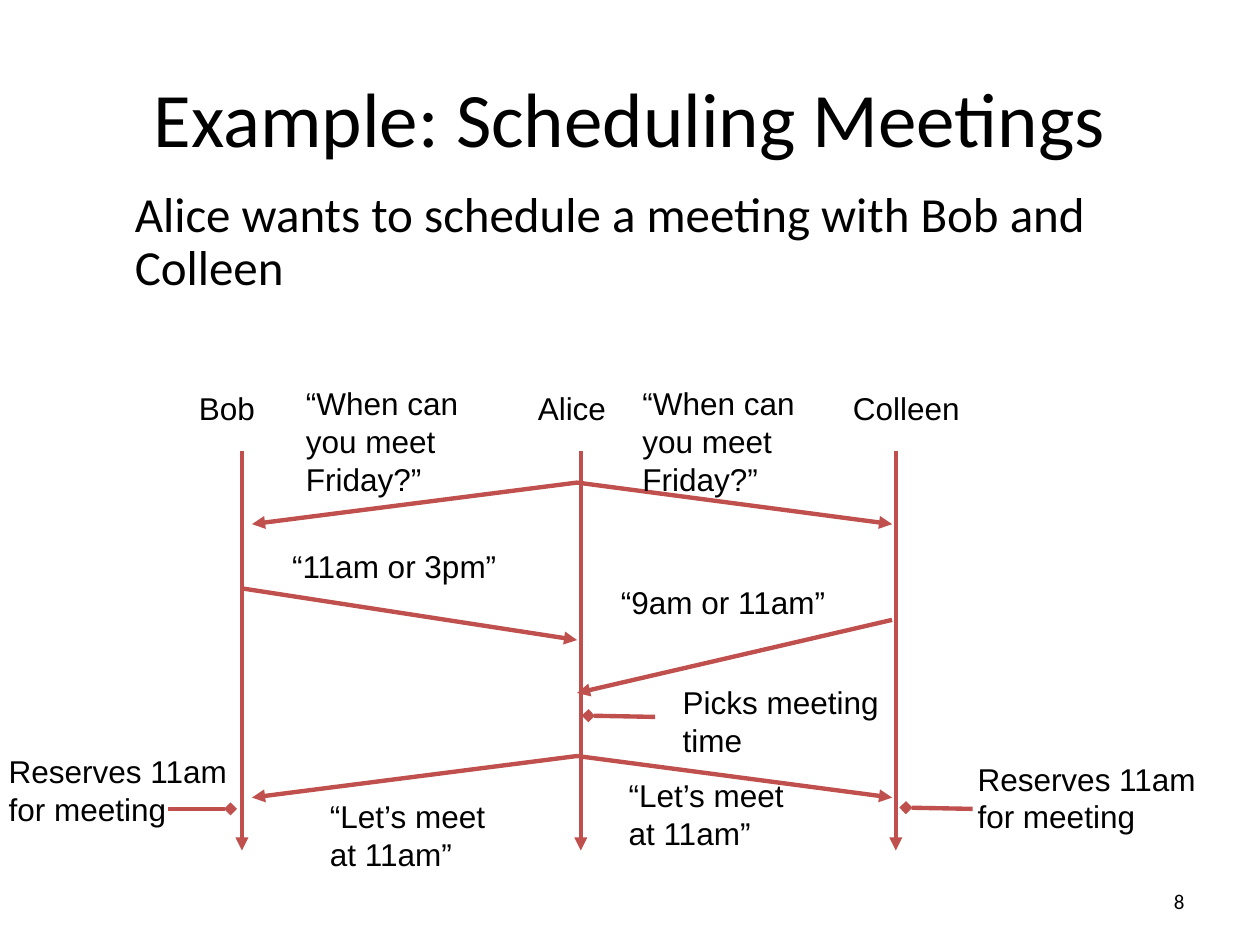
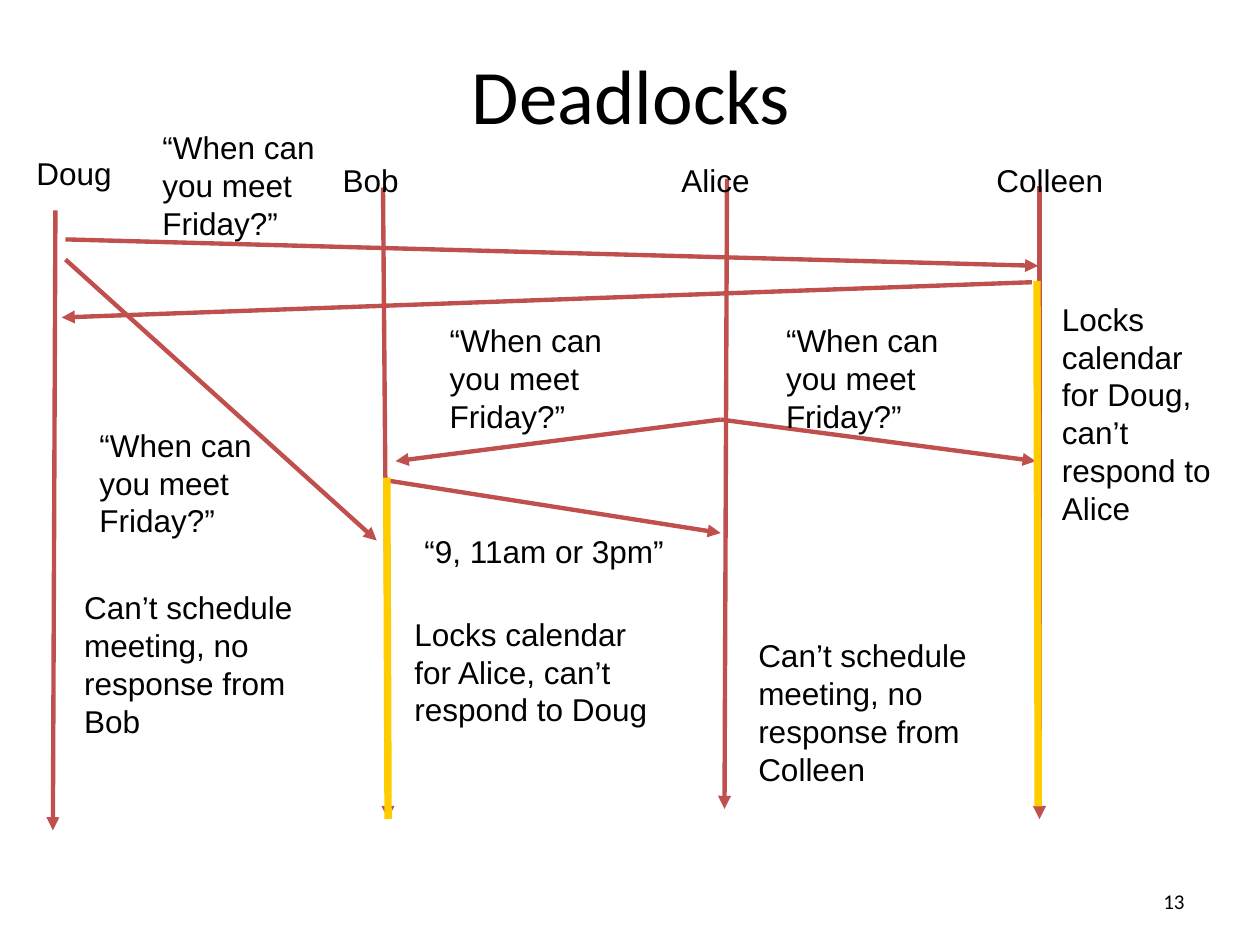
import dataclasses

import pptx
import pptx.dml.color
import pptx.enum.shapes
import pptx.enum.text
import pptx.oxml.ns
import pptx.util
from lxml import etree

Inches = pptx.util.Inches
Align = pptx.enum.text.PP_ALIGN
Anchor = pptx.enum.text.MSO_ANCHOR


@dataclasses.dataclass(frozen=True)
class Theme:
    """Colours, fonts and type sizes shared by the slides."""
    ink: str = "000000"
    arrow: str = "C0504D"
    lock: str = "FFCC00"
    heading_font: str = "Calibri"
    diagram_font: str = "Arial"
    title_size: float = 44
    body_size: float = 28
    label_size: float = 18
    number_size: float = 12
    arrow_width: float = 2.5
    lock_width: float = 4.25


@dataclasses.dataclass(frozen=True)
class Box:
    """A region of the slide, in inches."""
    left: float
    top: float
    width: float
    height: float

    def inner(self, x, y, width, height):
        """Return a box placed relative to this one."""
        return Box(self.left + x, self.top + y, width, height)


THEME = Theme()
NUMBER_BOX = Box(7.17, 6.95, 2.33, 0.4)
REQUEST = "“When can you meet Friday?”"
CONFIRMATION = "“Let’s meet at 11am”"
NAME_WIDTHS = {"Doug": 0.8, "Bob": 0.65, "Alice": 0.74, "Colleen": 1.05}


def write(slide, box, text, size, font, align=Align.LEFT, anchor=Anchor.TOP, wrap=True):
    """Add a text box and return its frame."""
    frame = slide.shapes.add_textbox(
        Inches(box.left), Inches(box.top), Inches(box.width), Inches(box.height)
    ).text_frame
    frame.text = text
    frame.word_wrap = wrap
    frame.vertical_anchor = anchor
    for paragraph in frame.paragraphs:
        paragraph.alignment = align
        for run in paragraph.runs:
            run.font.size = pptx.util.Pt(size)
            run.font.name = font
            run.font.color.rgb = pptx.dml.color.RGBColor.from_string(THEME.ink)
    return frame


def label(slide, box, x, y, width, text, lines=1, wrap=True):
    """Add diagram wording that takes the given number of lines."""
    write(slide, box.inner(x, y, width, 0.1 + 0.3 * lines), text,
          THEME.label_size, THEME.diagram_font, wrap=wrap)


def note(slide, box, x, y, width, text):
    """Add a remark whose line breaks are fixed."""
    label(slide, box, x, y, width, text, text.count("\n") + 1, wrap=False)


def draw_line(slide, box, start, end, head=None, tail=None,
              color=THEME.arrow, width=THEME.arrow_width):
    """Draw a straight line with optional end marks."""
    connector = slide.shapes.add_connector(
        pptx.enum.shapes.MSO_CONNECTOR.STRAIGHT,
        Inches(box.left + start[0]), Inches(box.top + start[1]),
        Inches(box.left + end[0]), Inches(box.top + end[1]))
    connector.line.color.rgb = pptx.dml.color.RGBColor.from_string(color)
    connector.line.width = pptx.util.Pt(width)
    qn = pptx.oxml.ns.qn
    outline = connector.line._get_or_add_ln()
    for tag, mark in (("a:headEnd", head), ("a:tailEnd", tail)):
        if mark:
            etree.SubElement(outline, qn(tag), type=mark)
    etree.SubElement(connector._element.spPr, qn("a:effectLst"))


def arrow(slide, box, start, end):
    """Draw a message or a lifeline."""
    draw_line(slide, box, start, end, tail="triangle")


def event_mark(slide, box, start, end):
    """Tie a remark to a lifeline with a diamond."""
    draw_line(slide, box, start, end, head="diamond")


def lock_bar(slide, box, start, end):
    """Mark the time a calendar is locked."""
    draw_line(slide, box, start, end, color=THEME.lock, width=THEME.lock_width)


def lifeline(slide, box, name, name_at, start, end):
    """Draw a person's name and lifeline."""
    arrow(slide, box, start, end)
    note(slide, box, *name_at, NAME_WIDTHS[name], name)


def broadcast(slide, box, x, y, text, lines, offsets):
    """Send one message from Alice to both neighbours."""
    for reach, (dx, dy) in zip((-2.58, 2.5), offsets):
        arrow(slide, box, (x, y), (x + reach, y + 0.33))
        label(slide, box, x + dx, y + dy, 1.58, text, lines)


def request_fan(slide, box, x, y):
    """Broadcast the request for a meeting time."""
    broadcast(slide, box, x, y, REQUEST, 3, ((-2.25, -0.83), (0.42, -0.83)))


def slide_frame(slide, title_box, title, number):
    """Add the title and slide number."""
    write(slide, title_box, title, THEME.title_size, THEME.heading_font,
          Align.CENTER, Anchor.MIDDLE)
    write(slide, NUMBER_BOX, number, THEME.number_size, THEME.heading_font,
          Align.RIGHT, Anchor.MIDDLE)


def introduction(slide, box, text):
    """Add the indented opening sentence."""
    frame = write(slide, box, text, THEME.body_size, THEME.heading_font)
    frame.margin_left = Inches(0.48)
    frame.paragraphs[0].line_spacing = 0.9


def scheduling_diagram(slide, box):
    """Draw the exchange that settles on 11am."""
    for name, x in (("Bob", 1.92), ("Alice", 4.61), ("Colleen", 7.11)):
        lifeline(slide, box, name, (x - 0.44, 0.04), (x, 0.58), (x, 3.75))

    request_fan(slide, box, 4.58, 0.83)
    arrow(slide, box, (1.92, 1.67), (4.58, 2.08))
    arrow(slide, box, (7.08, 1.92), (4.58, 2.5))
    label(slide, box, 2.22, 1.29, 2.17, "“11am or 3pm”")
    label(slide, box, 4.83, 1.58, 2.17, "“9am or 11am”")
    broadcast(slide, box, 4.58, 3, CONFIRMATION, 2, ((-2.06, 0.28), (0.31, 0.11)))

    event_mark(slide, box, (4.67, 2.68), (5.2, 2.69))
    label(slide, box, 5.32, 2.37, 1.76, "Picks meeting time", 2)
    event_mark(slide, box, (1.83, 3.42), (1.33, 3.42))
    event_mark(slide, box, (7.19, 3.41), (7.72, 3.42))
    for x, y in ((-0.03, 2.92), (7.66, 2.98)):
        note(slide, box, x, y, 1.95, "Reserves 11am\nfor meeting")


def deadlock_diagram(slide, box):
    """Draw the requests that block each other."""
    lifelines = (
        ("Doug", (0.19, 0.2), (0.44, 0.7), (0.42, 5.62)),
        ("Bob", (2.62, 0.26), (3.04, 0.52), (3.08, 5.53)),
        ("Alice", (5.31, 0.26), (5.77, 0.45), (5.75, 5.45)),
        ("Colleen", (7.81, 0.26), (8.25, 0.51), (8.25, 5.53)),
    )
    for person in lifelines:
        lifeline(slide, box, *person)

    request_fan(slide, box, 5.72, 2.36)
    arrow(slide, box, (3.05, 2.84), (5.72, 3.26))
    label(slide, box, 3.27, 3.2, 2.17, "“9, 11am or 3pm”")
    arrow(slide, box, (8.19, 1.27), (0.49, 1.55))
    arrow(slide, box, (0.52, 1.09), (2.99, 3.32))
    for x, y in ((1.19, 0), (0.69, 2.36)):
        label(slide, box, x, y, 1.58, REQUEST, 3)

    lock_bar(slide, box, (3.07, 2.82), (3.08, 5.53))
    lock_bar(slide, box, (8.23, 1.26), (8.24, 5.43))
    arrow(slide, box, (0.52, 0.93), (8.24, 1.14))

    note(slide, box, 3.19, 3.86, 2.05,
         "Locks calendar\nfor Alice, can’t\nrespond to Doug")
    label(slide, box, 8.33, 1.36, 1.67,
          "Locks calendar\nfor Doug, can’t\nrespond to Alice", 6)
    for x, y, silent in ((0.57, 3.65, "Bob"), (5.92, 4.03, "Colleen")):
        note(slide, box, x, y, 1.86,
             f"Can’t schedule\nmeeting, no\nresponse from\n{silent}")


def scheduling_slide(slide, box):
    """Compose the scheduling example."""
    slide_frame(slide, box.inner(0.5, 0.3, 9, 1.25), "Example: Scheduling Meetings", "8")
    introduction(slide, box.inner(0.59, 1.46, 9, 1.3),
                 "Alice wants to schedule a meeting with Bob and Colleen")
    scheduling_diagram(slide, box.inner(0, 3, 10, 4))


def deadlock_slide(slide, box):
    """Compose the deadlock example."""
    slide_frame(slide, box.inner(0.51, 0.12, 9, 1.25), "Deadlocks", "13")
    deadlock_diagram(slide, box.inner(0, 0.97, 10, 5.7))


def main():
    """Build and save the presentation."""
    presentation = pptx.Presentation()
    page = Box(0, 0, 10, 7.5)
    presentation.slide_width = Inches(page.width)
    presentation.slide_height = Inches(page.height)
    blank = presentation.slide_layouts[6]
    for compose in (scheduling_slide, deadlock_slide):
        compose(presentation.slides.add_slide(blank), page)
    presentation.save("out.pptx")


if __name__ == "__main__":
    main()
